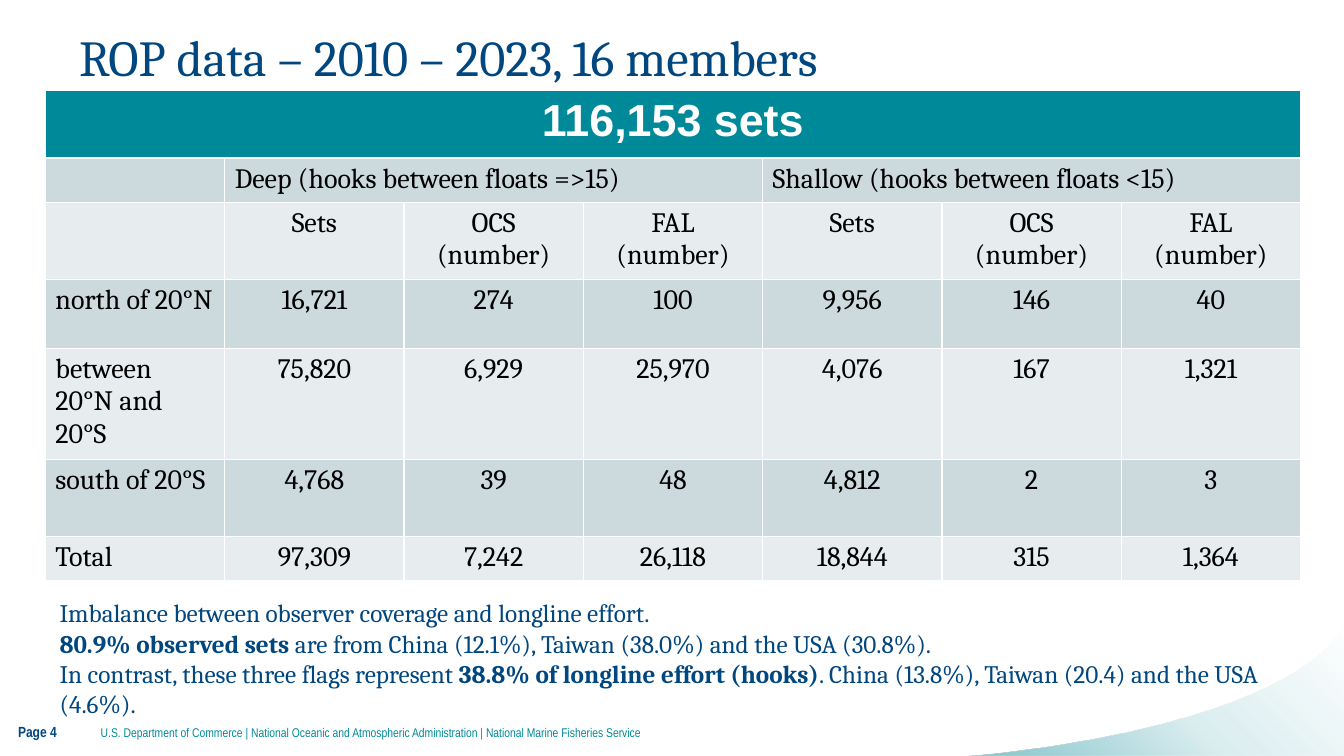
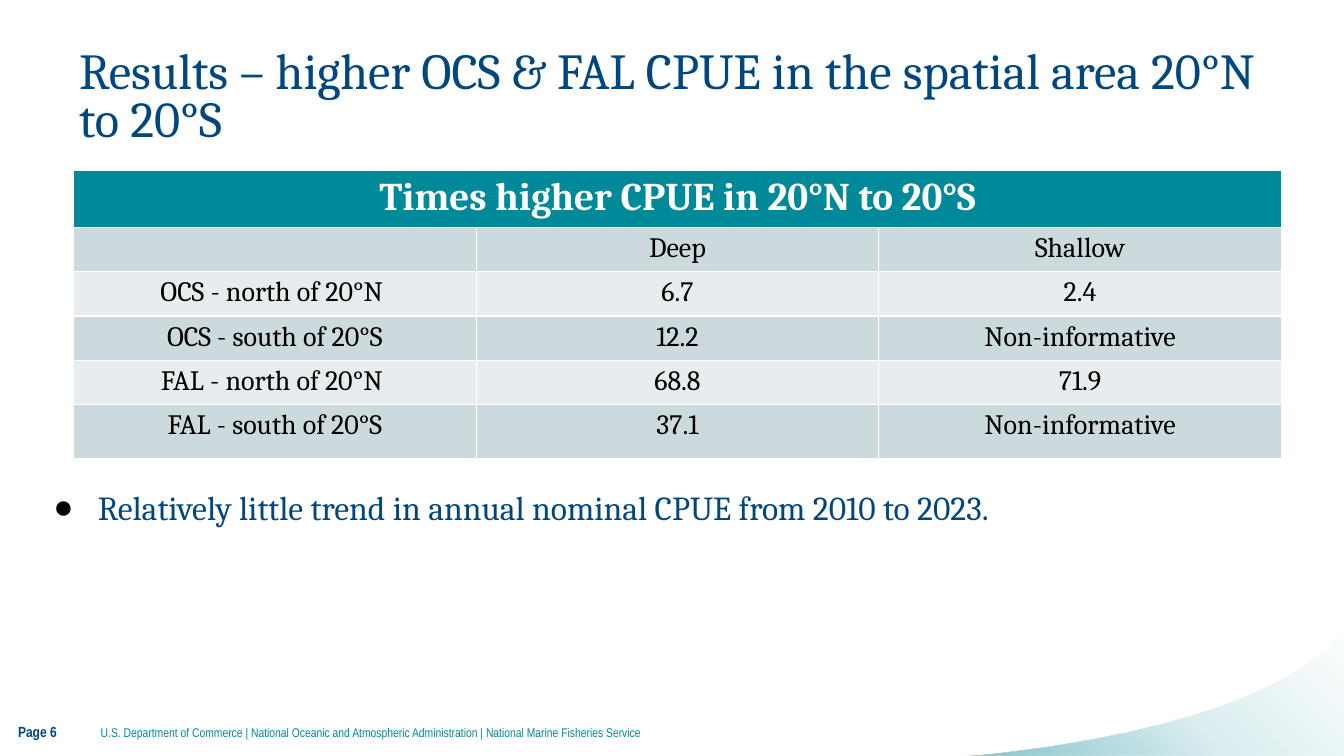
from lxml import etree
from pptx import Presentation
from pptx.dml.color import RGBColor
from pptx.enum.text import MSO_ANCHOR, MSO_AUTO_SIZE, PP_ALIGN
from pptx.oxml.ns import qn
from pptx.util import Inches, Pt

LEFT, CENTER = PP_ALIGN.LEFT, PP_ALIGN.CENTER
TOP, MIDDLE, BOTTOM = MSO_ANCHOR.TOP, MSO_ANCHOR.MIDDLE, MSO_ANCHOR.BOTTOM
NO_FIT = MSO_AUTO_SIZE.NONE

NAVY, TEAL, AQUA = "00467F", "008998", "83C4CC"
BLACK, WHITE = "000000", "FFFFFF"
BANDS = ("CCDADD", "E7EDEF")
SERIF, SANS, NARROW = "Cambria", "Arial", "Arial Narrow"
FOOTER = ("U.S. Department of Commerce | National Oceanic and Atmospheric "
          "Administration | National Marine Fisheries Service")


def rgb(color):
    return RGBColor.from_string(color)


def add_run(paragraph, text, size, color, font=SERIF, bold=False):
    run = paragraph.add_run()
    run.text = text
    run.font.size, run.font.name, run.font.bold = Pt(size), font, bold
    run.font.color.rgb = rgb(color)


def set_bullet(paragraph, char=None, margin=0, indent=0):
    """Give the paragraph a black bullet, or none when no char is given."""
    props = paragraph._p.get_or_add_pPr()
    props.set("marL", str(Inches(margin)))
    props.set("indent", str(Inches(indent)))
    if char is None:
        etree.SubElement(props, qn("a:buNone"))
        return
    bullet_color = etree.SubElement(props, qn("a:buClr"))
    etree.SubElement(bullet_color, qn("a:srgbClr"), val=BLACK)
    etree.SubElement(props, qn("a:buFont"), typeface=SANS)
    etree.SubElement(props, qn("a:buChar"), char=char)


def cubic(start, pull_start, pull_end, end, steps=40):
    """Points along a cubic curve."""
    for step in range(steps + 1):
        t = step / steps
        weights = ((1 - t) ** 3, 3 * t * (1 - t) ** 2, 3 * t * t * (1 - t), t ** 3)
        yield tuple(sum(w * p[axis] for w, p in
                        zip(weights, (start, pull_start, pull_end, end)))
                    for axis in (0, 1))


class Deck:
    """Style and current slide; all lengths are percent of the slide's size."""

    def __init__(self):
        self.prs = Presentation()
        self.prs.slide_width, self.prs.slide_height = Inches(13.33), Inches(7.5)
        self.slide = None

    def x(self, share):
        return round(self.prs.slide_width * share / 100)

    def y(self, share):
        return round(self.prs.slide_height * share / 100)

    def box(self, left, top, width, height):
        return self.x(left), self.y(top), self.x(width), self.y(height)

    def new_slide(self, page):
        self.slide = self.prs.slides.add_slide(self.prs.slide_layouts[1])
        self.swoosh()
        self.small_print(FOOTER, (7.5, 92.93, 73.3, 7.87), 9, TEAL)
        self.small_print(f"Page {page}", (1.35, 92.67, 6.15, 8.13), 10.5, NAVY, True)

    def swoosh(self):
        """Corner curve, fading out towards the upper right."""
        curve = cubic((99.62, 83.6), (96.85, 91.2), (86.87, 97.2), (73.82, 99.73))
        outline = [(100, 100), (100, 82.27), *curve]
        builder = self.slide.shapes.build_freeform(self.x(72.09), self.y(100))
        builder.add_line_segments([(self.x(a), self.y(b)) for a, b in outline])
        corner = builder.convert_to_shape()
        corner.shadow.inherit = False
        corner.line.fill.background()
        corner.fill.gradient()
        corner.fill.gradient_angle = 45
        stops = corner.element.spPr.find(qn("a:gradFill")).find(qn("a:gsLst"))
        stops.clear()
        for position, opacity in ((0, 100), (50, 30), (100, 0)):
            stop = etree.SubElement(stops, qn("a:gs"), pos=str(position * 1000))
            color = etree.SubElement(stop, qn("a:srgbClr"), val=AQUA)
            etree.SubElement(color, qn("a:alpha"), val=str(opacity * 1000))

    def small_print(self, text, area, size, color, bold=False):
        frame = self.slide.shapes.add_textbox(*self.box(*area)).text_frame
        frame.word_wrap, frame.vertical_anchor = True, MIDDLE
        frame.margin_left = frame.margin_right = 0
        add_run(frame.paragraphs[0], text, size, color, NARROW, bold)

    def place(self, holder, area, anchor):
        """Move a placeholder and return its text frame."""
        holder.left, holder.top, holder.width, holder.height = self.box(*area)
        frame = holder.text_frame
        frame.auto_size, frame.vertical_anchor = NO_FIT, anchor
        return frame

    def title(self, text, top, height):
        frame = self.place(self.slide.shapes.title, (5.88, top, 89.87, height), BOTTOM)
        frame.margin_left = frame.margin_right = 0
        frame.margin_top = frame.margin_bottom = 0
        heading = frame.paragraphs[0]
        heading.alignment, heading.line_spacing = LEFT, 0.8
        add_run(heading, text, 36, NAVY)

    def body(self, lines, area, size, **bullet):
        """Each line is a list of (text, bold) runs."""
        frame = self.place(self.slide.placeholders[1], area, TOP)
        for number, line in enumerate(lines):
            paragraph = frame.add_paragraph() if number else frame.paragraphs[0]
            paragraph.space_before = Pt(0)
            set_bullet(paragraph, **bullet)
            for text, bold in line:
                add_run(paragraph, text, size, NAVY, bold=bold)

    def table(self, heading, rows, area, heights, heading_size, heading_font=SERIF,
              spans=(), left_cells=()):
        """Banded table under one merged heading; spans are (row, first, last)."""
        left, top, width = area
        columns = len(rows[0])
        grid = self.slide.shapes.add_table(
            len(heights), columns, *self.box(left, top, width, sum(heights))).table
        for column in grid.columns:
            column.width = self.x(width / columns)
        for row, height in zip(grid.rows, heights):
            row.height = self.y(height)
        for row, first, last in ((0, 0, columns - 1), *spans):
            grid.cell(row, first).merge(grid.cell(row, last))
        self.cell(grid.cell(0, 0), heading, TEAL, heading_size, WHITE, heading_font, True)
        for r, values in enumerate(rows, 1):
            for c, value in enumerate(values):
                align = LEFT if (r, c) in left_cells else CENTER
                self.cell(grid.cell(r, c), value, BANDS[(r - 1) % 2], align=align)

    def cell(self, cell, text, fill, size=20, color=BLACK, font=SERIF, bold=False,
             align=CENTER):
        cell.fill.solid()
        cell.fill.fore_color.rgb = rgb(fill)
        if text:
            cell.text_frame.paragraphs[0].alignment = align
            add_run(cell.text_frame.paragraphs[0], text, size, color, font, bold)


def observer_data(deck):
    deck.new_slide(4)
    deck.title("ROP data – 2010 – 2023, 16 members", 5.07, 6.4)
    measures = ["Sets", "OCS (number)", "FAL (number)"]
    rows = [
        ["", "Deep (hooks between floats =>15)", "", "",
         "Shallow (hooks between floats <15)", "", ""],
        ["", *measures, *measures],
        ["north of 20°N", "16,721", "274", "100", "9,956", "146", "40"],
        ["between 20°N and 20°S", "75,820", "6,929", "25,970", "4,076", "167", "1,321"],
        ["south of 20°S", "4,768", "39", "48", "4,812", "2", "3"],
        ["Total", "97,309", "7,242", "26,118", "18,844", "315", "1,364"],
    ]
    region_cells = [(row, 0) for row in range(3, 7)]
    deck.table("116,153 sets", rows, (3.38, 12, 93.4),
               (8.9, 5.85, 10.2, 9.1, 14.7, 10.2, 5.85), 32, SANS,
               spans=((1, 1, 3), (1, 4, 6)),
               left_cells=[(1, 1), (1, 4), *region_cells])
    deck.body([
        [("Imbalance between observer coverage and longline effort.", False)],
        [("80.9% observed sets ", True),
         ("are from China (12.1%), Taiwan (38.0%) and the USA (30.8%).", False)],
        [("In contrast, these three flags represent ", False),
         ("38.8% of longline effort (hooks)", True),
         (". China (13.8%), Taiwan (20.4) and the USA (4.6%).", False)],
    ], (3.68, 78.4, 91.6, 20.67), 18)


def catch_rates(deck):
    deck.new_slide(6)
    deck.title("Results – higher OCS & FAL CPUE in the spatial area 20°N to 20°S",
               6.53, 12.93)
    rows = [
        ["", "Deep", "Shallow"],
        ["OCS - north of 20°N ", "6.7", "2.4"],
        ["OCS - south of 20°S", "12.2", "Non-informative"],
        ["FAL - north of 20°N ", "68.8", "71.9"],
        ["FAL - south of 20°S", "37.1", "Non-informative"],
    ]
    deck.table("Times higher CPUE in 20°N to 20°S", rows, (5.48, 22.53, 89.87),
               (7.3, *[5.85] * 4, 7.2), 28)
    deck.body([[("Relatively little trend in annual nominal CPUE from 2010 to 2023.",
                 False)]],
              (2.78, 63.7, 93.55, 12), 24, char="●", margin=0.5, indent=-0.44)


def main():
    deck = Deck()
    observer_data(deck)
    catch_rates(deck)
    deck.prs.save("out.pptx")


if __name__ == "__main__":
    main()
